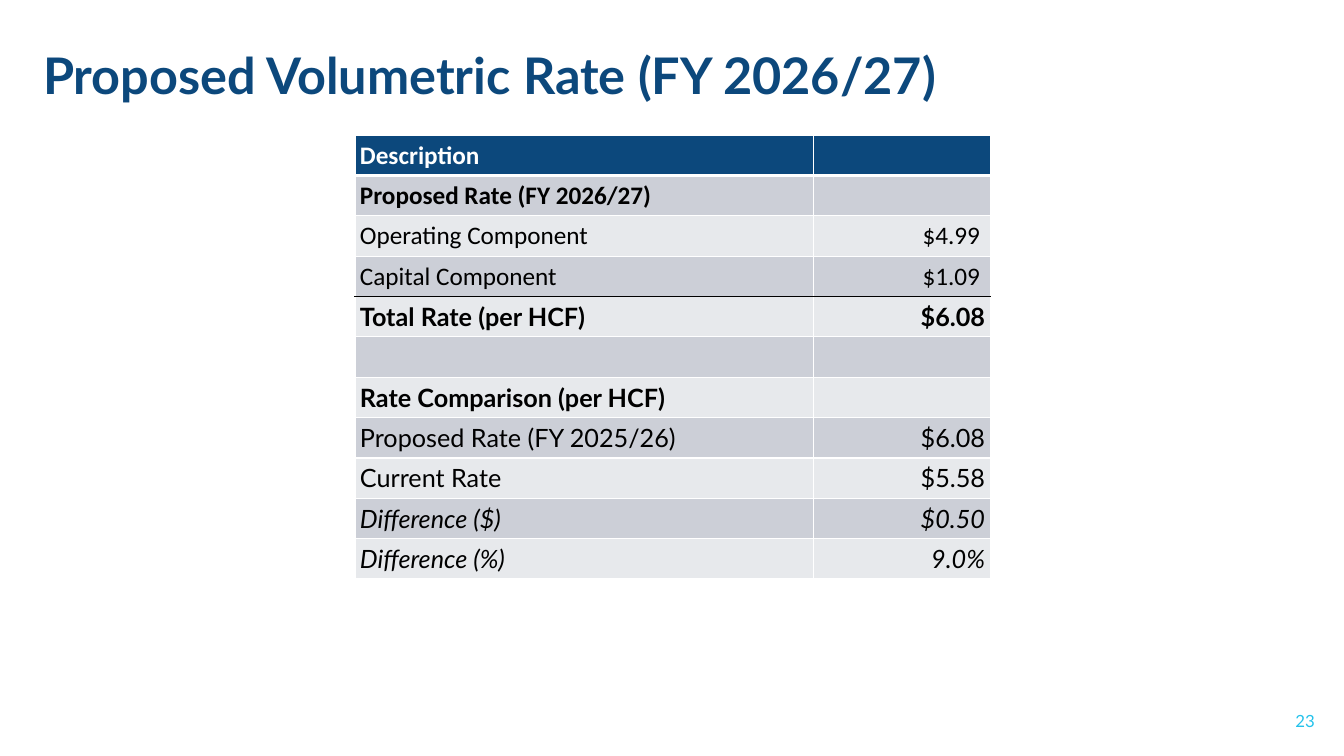
from lxml import etree
from pptx import Presentation
from pptx.dml.color import RGBColor
from pptx.enum.text import MSO_ANCHOR, PP_ALIGN
from pptx.oxml.ns import qn
from pptx.util import Inches, Pt

BOTTOM, MIDDLE = MSO_ANCHOR.BOTTOM, MSO_ANCHOR.MIDDLE
LEFT, RIGHT = PP_ALIGN.LEFT, PP_ALIGN.RIGHT

NAVY, CYAN, WHITE, BLACK = "0C487C", "24C2EB", "FFFFFF", "000000"
BANDS = ("E7E9EC", "CCCFD7")
TITLE = "Proposed Volumetric Rate (FY 2026/27)"
PAGE = "23"
RATES = [
    ("Description", "", "Calibri", "bold"),
    ("Proposed Rate (FY 2026/27)", "", "Calibri", "bold"),
    ("Operating Component", "$4.99", "Calibri", ""),
    ("Capital Component", "$1.09", "Calibri", ""),
    ("Total Rate (per HCF)", "$6.08", "Lato", "bold"),
    ("", "", "Lato", ""),
    ("Rate Comparison (per HCF)", "", "Lato", "bold"),
    ("Proposed Rate (FY 2025/26)", "$6.08", "Lato", ""),
    ("Current Rate", "$5.58", "Lato", ""),
    ("Difference ($)", "$0.50", "Lato", "italic"),
    ("Difference (%)", "9.0%", "Lato", "italic"),
]
COMPONENT_ROWS = (2, 3)
TOTAL_ROW = 4
COLUMNS = (4.55, 1.75)
ROW_HEIGHT = 0.4
PADDING = 0.05


def rgb(code):
    return RGBColor.from_string(code)


def write(frame, text, face, size, color, align=LEFT, style=""):
    paragraph = frame.paragraphs[0]
    paragraph.text = text
    paragraph.alignment = align
    font = paragraph.font
    font.name, font.size, font.color.rgb = face, Pt(size), rgb(color)
    font.bold, font.italic = style == "bold", style == "italic"
    return paragraph


def add_label(slide, box, anchor, *text_settings):
    frame = slide.shapes.add_textbox(*map(Inches, box)).text_frame
    frame.word_wrap = True
    frame.vertical_anchor = anchor
    return write(frame, *text_settings)


def set_borders(cell, top, bottom):
    sides = {"lnL": (WHITE, 1), "lnR": (WHITE, 1), "lnT": top, "lnB": bottom}
    properties = cell._tc.get_or_add_tcPr()
    for position, (side, (color, width)) in enumerate(sides.items()):
        line = etree.Element(qn(f"a:{side}"), w=str(Pt(width)))
        fill = etree.SubElement(line, qn("a:solidFill"))
        etree.SubElement(fill, qn("a:srgbClr"), val=color)
        properties.insert(position, line)


def rule_above(row):
    return {1: (WHITE, 3), TOTAL_ROW: (BLACK, 1)}.get(row, (WHITE, 1))


def add_rates(slide):
    table = slide.shapes.add_table(
        len(RATES), len(COLUMNS), Inches(3.52), Inches(1.34),
        Inches(sum(COLUMNS)), Inches(ROW_HEIGHT * len(RATES))).table
    for column, width in zip(table.columns, COLUMNS):
        column.width = Inches(width)
    for row, (label, amount, face, style) in enumerate(RATES):
        for column, (text, align) in enumerate(((label, LEFT), (amount, RIGHT))):
            cell = table.cell(row, column)
            cell.margin_left = cell.margin_top = cell.margin_bottom = Inches(PADDING)
            indent = 2 if column and row in COMPONENT_ROWS else 1
            cell.margin_right = Inches(PADDING * indent)
            cell.vertical_anchor = BOTTOM
            cell.fill.solid()
            cell.fill.fore_color.rgb = rgb(BANDS[row % 2] if row else NAVY)
            set_borders(cell, rule_above(row), rule_above(row + 1))
            write(cell.text_frame, text, face, 18, BLACK if row else WHITE, align, style)


def main():
    """Build the proposed volumetric rate slide."""
    deck = Presentation()
    deck.slide_width, deck.slide_height = Inches(13.33), Inches(7.5)
    slide = deck.slides.add_slide(deck.slide_layouts[6])
    title = add_label(slide, (0.33, 0.4, 12.8, 0.7), BOTTOM,
                      TITLE, "Lato", 36, NAVY, LEFT, "bold")
    title.line_spacing = 0.9
    add_rates(slide)
    add_label(slide, (10.14, 6.95, 3, 0.4), MIDDLE, PAGE, "Lato", 12, CYAN, RIGHT)
    deck.save("out.pptx")


if __name__ == "__main__":
    main()
